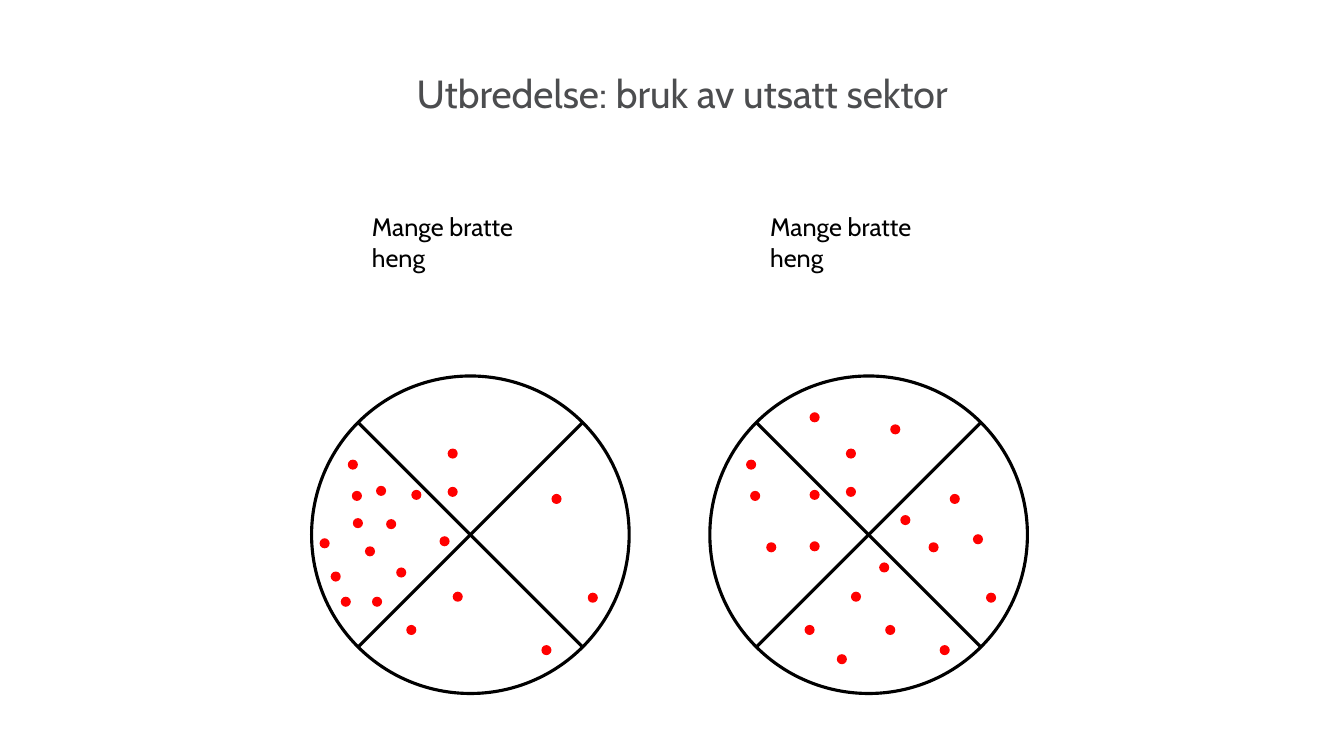
from pptx import Presentation
from pptx.dml.color import RGBColor
from pptx.enum.shapes import MSO_SHAPE as Shape
from pptx.enum.text import MSO_ANCHOR as Anchor, PP_ALIGN as Align
from pptx.util import Inches, Pt

COLORS = {"line": "000000", "dot": "FF0000", "label": "000000", "title": "4C4D4F"}
FONTS = {
    "title": {"name": "Cabin", "size": Pt(28), "bold": False},
    "label": {"name": "Cabin", "size": Pt(18), "bold": False},
}
DISC_SIZE = 3.15
DISC_DROP = 1.68  # from the top of the label to the top of the disc
LABEL_INDENT = 0.5
DOT_SIZE = 0.1

# Top left corner of each dot, measured from the top left of its disc
SHARED_DOTS = [
    (0.4, 1.14), (1.35, 0.72), (1.4, 2.14), (2.38, 1.17), (2.28, 2.67),
    (1.35, 1.1), (0.36, 0.83), (0.94, 2.47), (2.74, 2.15), (0.99, 1.13),
]
CLUSTERED_DOTS = [
    (0.64, 1.09), (0.53, 1.69), (0.74, 1.42), (0.29, 2.19), (0.19, 1.94),
    (0.41, 1.41), (0.84, 1.9), (0.08, 1.61), (1.27, 1.59), (0.6, 2.19),
]
SPREAD_DOTS = [
    (0.99, 0.36), (0.99, 1.64), (1.79, 0.48), (1.26, 2.76), (2.17, 1.65),
    (1.74, 2.47), (1.68, 1.85), (2.61, 1.57), (1.89, 1.38), (0.56, 1.65),
]


def color(name):
    return RGBColor.from_string(COLORS[name])


def write_text(shape, text, style, alignment):
    frame = shape.text_frame
    frame.word_wrap = True
    frame.vertical_anchor = Anchor.TOP
    paragraph = frame.paragraphs[0]
    paragraph.alignment = alignment
    run = paragraph.add_run()
    run.text = text
    for attribute, value in FONTS[style].items():
        setattr(run.font, attribute, value)
    run.font.color.rgb = color(style)


def add_title(slide, left, top, width, height):
    title = slide.shapes.title
    title.left, title.top = Inches(left), Inches(top)
    title.width, title.height = Inches(width), Inches(height)
    write_text(title, "Utbredelse: bruk av utsatt sektor", "title", Align.CENTER)


def add_sector_disc(slide, left, top, text, dots):
    # Label
    label = slide.shapes.add_textbox(
        Inches(left + LABEL_INDENT), Inches(top), Inches(2.1), Inches(0.7))
    write_text(label, text, "label", Align.LEFT)

    # Disc with four sectors
    disc_top = top + DISC_DROP
    disc = slide.shapes.add_shape(
        Shape.FLOWCHART_SUMMING_JUNCTION, Inches(left), Inches(disc_top),
        Inches(DISC_SIZE), Inches(DISC_SIZE))
    disc.shadow.inherit = False
    disc.fill.background()
    disc.line.color.rgb = color("line")
    disc.line.width = Pt(2.25)

    # Dots
    for x, y in dots:
        dot = slide.shapes.add_shape(
            Shape.OVAL, Inches(left + x), Inches(disc_top + y),
            Inches(DOT_SIZE), Inches(DOT_SIZE))
        dot.shadow.inherit = False
        dot.fill.solid()
        dot.fill.fore_color.rgb = color("dot")
        dot.line.fill.background()


def main():
    presentation = Presentation()
    presentation.slide_width = Inches(13.33)
    presentation.slide_height = Inches(7.5)
    slide = presentation.slides.add_slide(presentation.slide_layouts[5])
    add_title(slide, 1.13, 0.64, 11.27, 0.9)
    for left, dots in ((3.09, CLUSTERED_DOTS), (7.04, SPREAD_DOTS)):
        add_sector_disc(slide, left, 2.05, "Mange bratte heng", SHARED_DOTS + dots)
    presentation.save("out.pptx")


if __name__ == "__main__":
    main()
